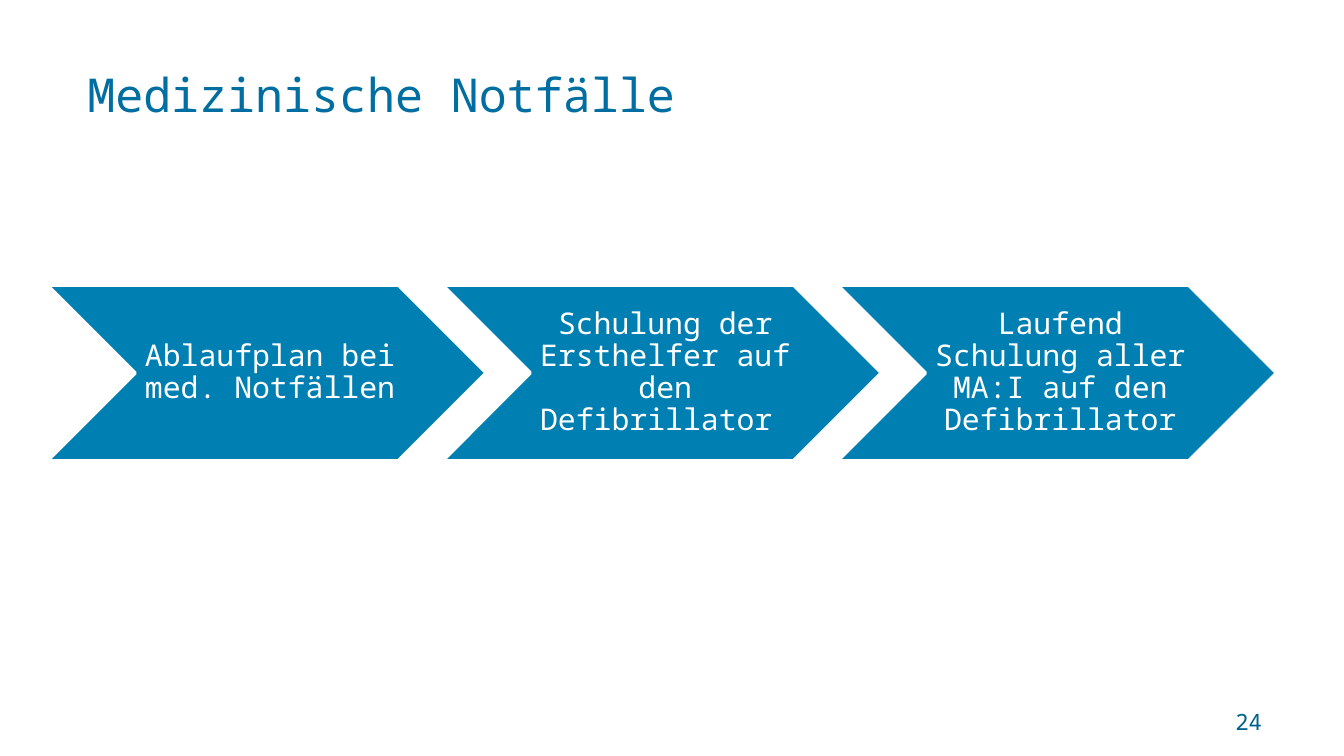
from dataclasses import dataclass

from pptx import Presentation
from pptx.dml.color import RGBColor
from pptx.enum.shapes import MSO_SHAPE
from pptx.enum.text import MSO_ANCHOR, PP_ALIGN
from pptx.util import Inches, Pt

CHEVRON = MSO_SHAPE.CHEVRON
MIDDLE = MSO_ANCHOR.MIDDLE
LEFT, CENTER, RIGHT = PP_ALIGN.LEFT, PP_ALIGN.CENTER, PP_ALIGN.RIGHT

FONT = "Noto Sans Mono"
COLORS = {"title": "006EA0", "page": "00618C", "step": "007FB2", "white": "FFFFFF"}


@dataclass
class Box:
    left: float
    top: float
    width: float
    height: float

    def dims(self) -> tuple:
        return tuple(Inches(n) for n in (self.left, self.top, self.width, self.height))


@dataclass
class Style:
    size: int
    color: str
    align: PP_ALIGN


def color(name: str) -> RGBColor:
    return RGBColor.from_string(COLORS[name])


def write(shape, text: str, style: Style) -> None:
    frame = shape.text_frame
    frame.text = text
    frame.word_wrap = True
    frame.vertical_anchor = MIDDLE
    para = frame.paragraphs[0]
    para.alignment = style.align
    for run in para.runs:
        run.font.name = FONT
        run.font.size = Pt(style.size)
        run.font.color.rgb = color(style.color)


def draw_step(slide, box: Box, text: str) -> None:
    step = slide.shapes.add_shape(CHEVRON, *box.dims())
    step.shadow.inherit = False
    step.fill.solid()
    step.fill.fore_color.rgb = color("step")
    step.line.color.rgb = color("white")
    step.line.width = Pt(2)
    write(step, text, Style(16, "white", CENTER))
    frame = step.text_frame
    frame.margin_left = Inches(0.07)
    frame.margin_top = frame.margin_right = frame.margin_bottom = Inches(0.02)
    frame.paragraphs[0].line_spacing = 0.9


STEPS = [
    "Ablaufplan bei med. Notfällen",
    "Schulung der Ersthelfer auf den Defibrillator ",
    "Laufend Schulung aller MA:I auf den Defibrillator",
]
FIRST = Box(0.35, 2.12, 3.27, 1.31)
PITCH = 2.94


def main() -> None:
    # Widescreen page, 16:9
    deck = Presentation()
    deck.slide_width = Inches(10)
    deck.slide_height = Inches(10 * 9 / 16)
    slide = deck.slides.add_slide(deck.slide_layouts[5])

    # Title
    title = slide.shapes.title
    title.left, title.top, title.width, title.height = Box(0.55, 0.23, 7.41, 0.94).dims()
    write(title, "Medizinische Notfälle", Style(25, "title", LEFT))

    # Page number
    page = slide.shapes.add_textbox(*Box(7.16, 5.22, 2.33, 0.3).dims())
    write(page, "24", Style(12, "page", RIGHT))

    # Process steps
    for i, text in enumerate(STEPS):
        box = Box(FIRST.left + i * PITCH, FIRST.top, FIRST.width, FIRST.height)
        draw_step(slide, box, text)

    deck.save("out.pptx")


if __name__ == "__main__":
    main()
